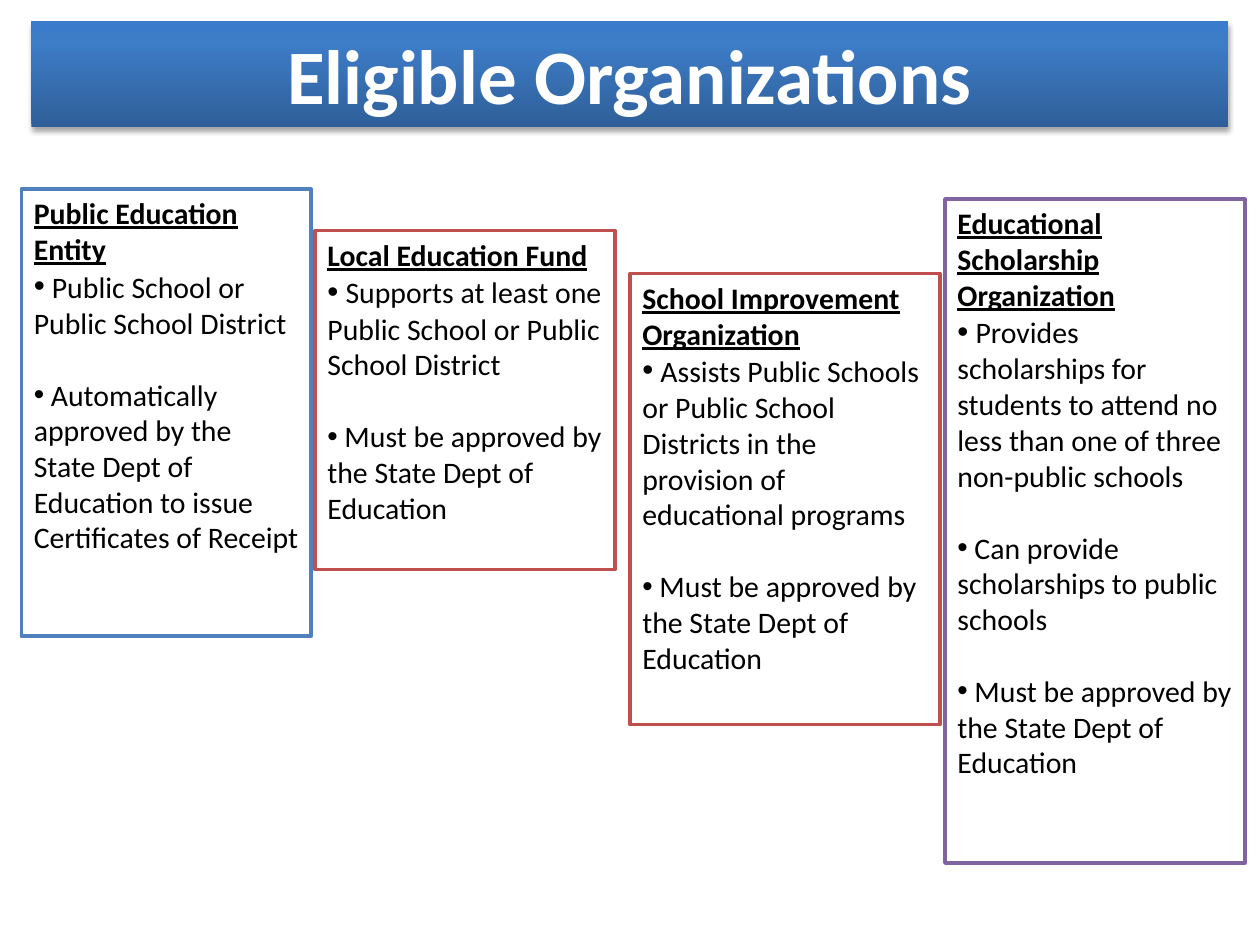
import copy

import pptx
import pptx.dml.color
import pptx.enum.shapes
import pptx.enum.text
import pptx.oxml
import pptx.oxml.ns
import pptx.util
from pptx.util import Inches

COLORS = {
    "white": "FFFFFF",
    "black": "000000",
    "blue": "4F81BD",
    "red": "C0504D",
    "purple": "8064A2",
    "banner_bottom": "2F5F99",
    "banner_middle": "3D7CC7",
    "banner_top": "3A7CCB",
}
APPROVAL = "Must be approved by the State Dept of Education"
ORGANIZATIONS = [
    ("Public Education Entity", "blue", (0.17, 1.5, 2.3, 3.55), [
        "Public School or Public School District",
        "Automatically approved by the State Dept of Education to issue Certificates of Receipt",
    ]),
    ("Educational Scholarship Organization", "purple", (7.5, 1.58, 2.38, 5.27), [
        "Provides scholarships for students to attend no less than one of three non-public schools",
        "Can provide scholarships to public schools",
        APPROVAL,
    ]),
    ("Local Education Fund", "red", (2.5, 1.83, 2.38, 2.69), [
        "Supports at least one Public School or Public School District",
        APPROVAL,
    ]),
    ("School Improvement Organization", "red", (5, 2.17, 2.46, 3.58), [
        "Assists Public Schools or Public School Districts in the provision of educational programs",
        APPROVAL,
    ]),
]


def add_rectangle(page, bounds):
    box = page.shapes.add_shape(
        pptx.enum.shapes.MSO_SHAPE.RECTANGLE, *[Inches(length) for length in bounds])
    box.shadow.inherit = False
    frame = box.text_frame
    frame.word_wrap = True
    frame.vertical_anchor = pptx.enum.text.MSO_ANCHOR.TOP
    frame.margin_left = frame.margin_right = Inches(0.1)
    frame.margin_top = frame.margin_bottom = Inches(0.05)
    return box


def style_paragraph(paragraph, size, color, heading=False, underline=False):
    paragraph.alignment = pptx.enum.text.PP_ALIGN.LEFT
    paragraph.font.name = "Calibri"
    paragraph.font.size = pptx.util.Pt(size)
    paragraph.font.bold = heading
    paragraph.font.underline = underline
    paragraph.font.color.rgb = pptx.dml.color.RGBColor.from_string(COLORS[color])


deck = pptx.Presentation()
deck.slide_width = Inches(10)
deck.slide_height = Inches(7.5)
page = deck.slides.add_slide(deck.slide_layouts[6])
namespace = pptx.oxml.ns.nsdecls("a")

for name, color, bounds, points in ORGANIZATIONS:
    box = add_rectangle(page, bounds)
    box.fill.solid()
    box.fill.fore_color.rgb = pptx.dml.color.RGBColor.from_string(COLORS["white"])
    box.line.color.rgb = pptx.dml.color.RGBColor.from_string(COLORS[color])
    box.line.width = pptx.util.Pt(2)
    heading = box.text_frame.paragraphs[0]
    heading.text = name
    style_paragraph(heading, 17, "black", heading=True, underline=True)
    for index, point in enumerate(points):
        paragraph = box.text_frame.add_paragraph()
        properties = paragraph._p.get_or_add_pPr()
        properties.append(pptx.oxml.parse_xml(f'<a:buFont {namespace} typeface="Arial"/>'))
        properties.append(pptx.oxml.parse_xml(f'<a:buChar {namespace} char="•"/>'))
        style_paragraph(paragraph, 17, "black")
        span = paragraph.add_run()
        span.text = " "
        if index == 0:
            span.font.size = pptx.util.Pt(18)
        else:
            paragraph.space_before = pptx.util.Pt(20.7)
        paragraph.add_run().text = point

banner = add_rectangle(page, (0.25, 0.17, 9.5, 0.84))
banner.line.fill.background()
banner.fill.gradient()
banner.fill.gradient_angle = 90
stop_list = banner.element.spPr.find(".//" + pptx.oxml.ns.qn("a:gsLst"))
stop_list.append(copy.deepcopy(stop_list[-1]))
stops = [(0, "banner_bottom"), (0.8, "banner_middle"), (1, "banner_top")]
for stop, (position, color) in zip(banner.fill.gradient_stops, stops):
    stop.position = position
    stop.color.rgb = pptx.dml.color.RGBColor.from_string(COLORS[color])
effects = banner.element.spPr.find(pptx.oxml.ns.qn("a:effectLst"))
effects.append(pptx.oxml.parse_xml(
    f'<a:outerShdw {namespace} blurRad="{pptx.util.Pt(3.1)}" dist="{pptx.util.Pt(1.8)}" '
    f'dir="5400000" rotWithShape="0"><a:srgbClr val="{COLORS["black"]}">'
    '<a:alpha val="35000"/></a:srgbClr></a:outerShdw>'))
title = banner.text_frame.paragraphs[0]
title.text = "Eligible Organizations"
style_paragraph(title, 44, "white", heading=True)
title.alignment = pptx.enum.text.PP_ALIGN.CENTER

deck.save("out.pptx")
